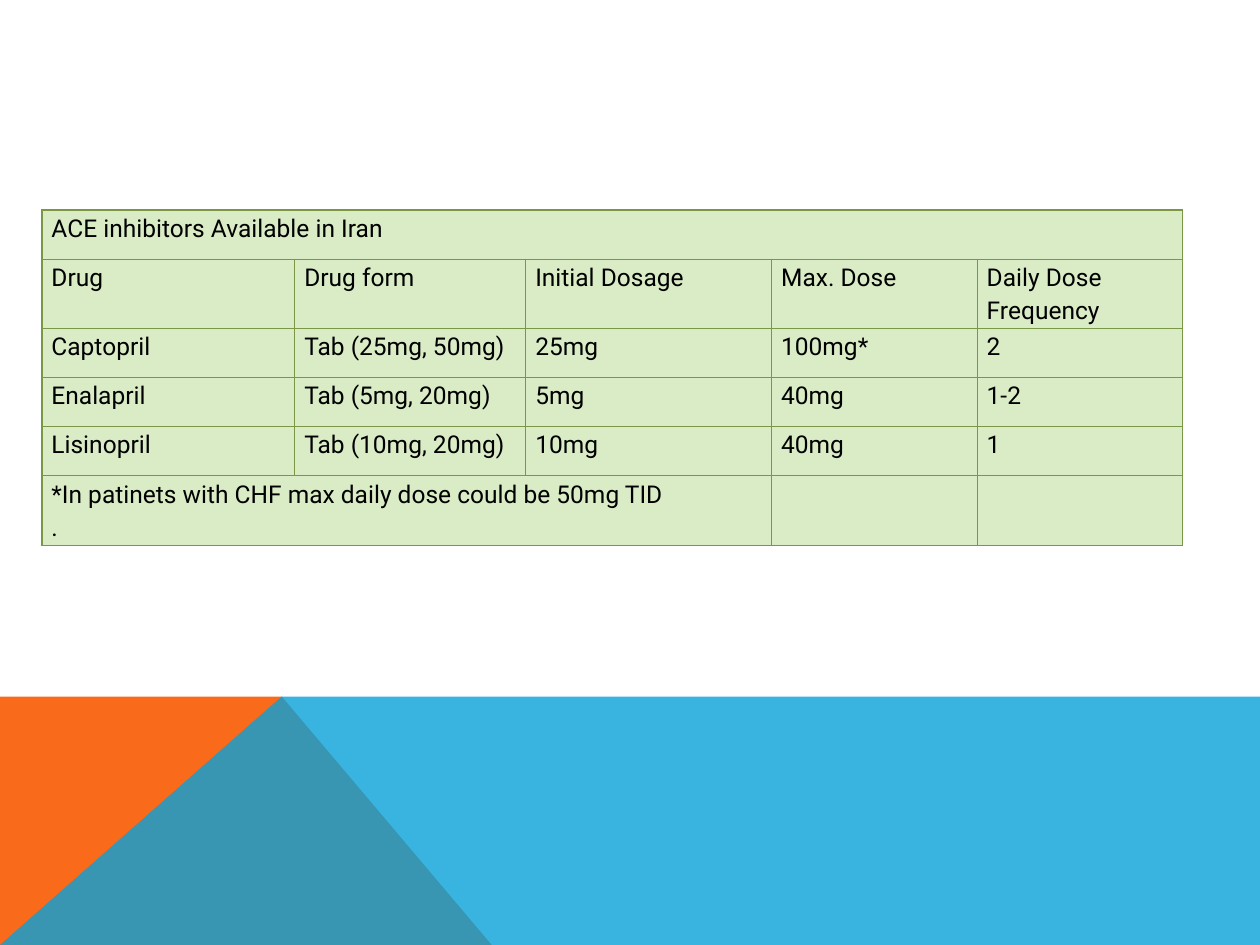
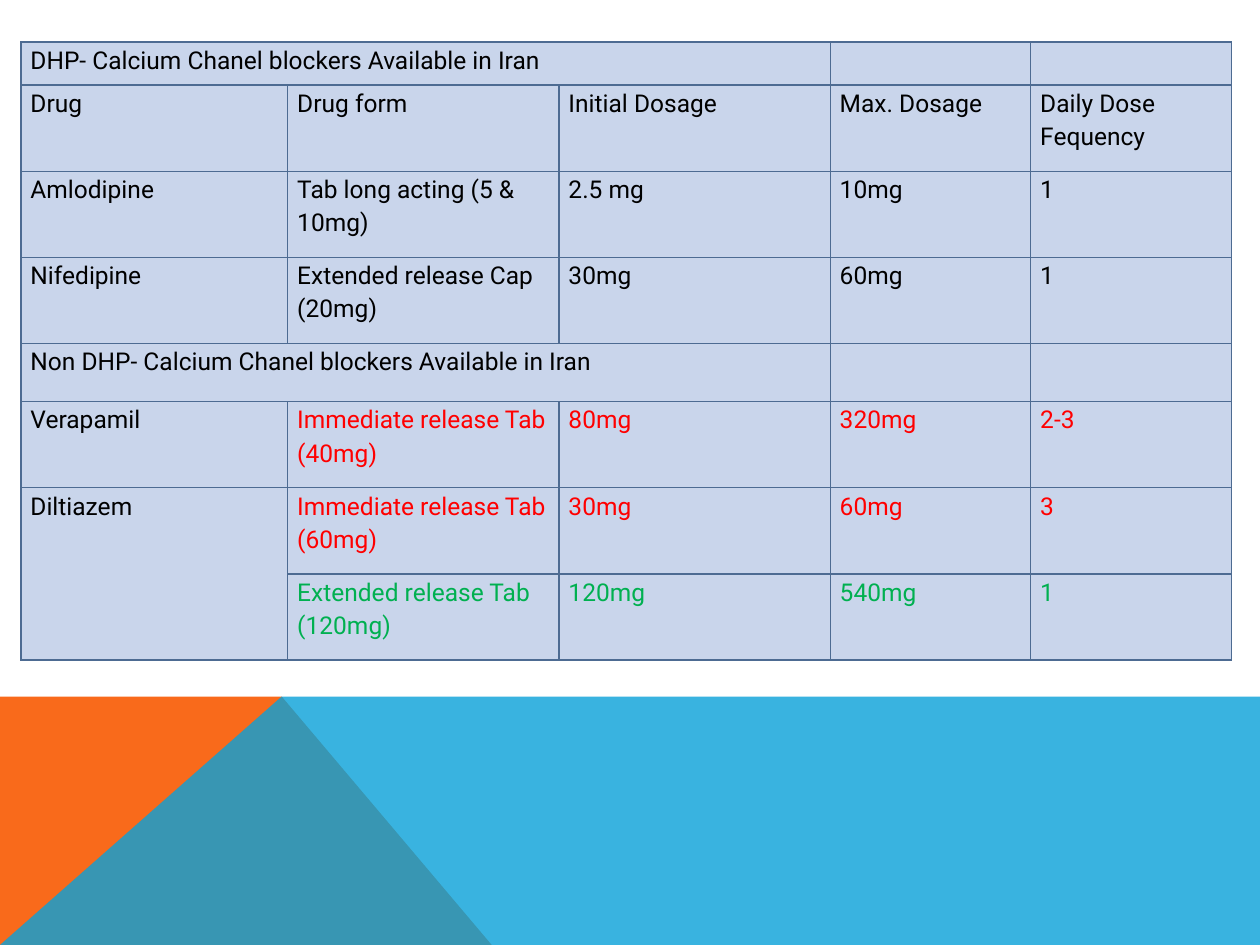
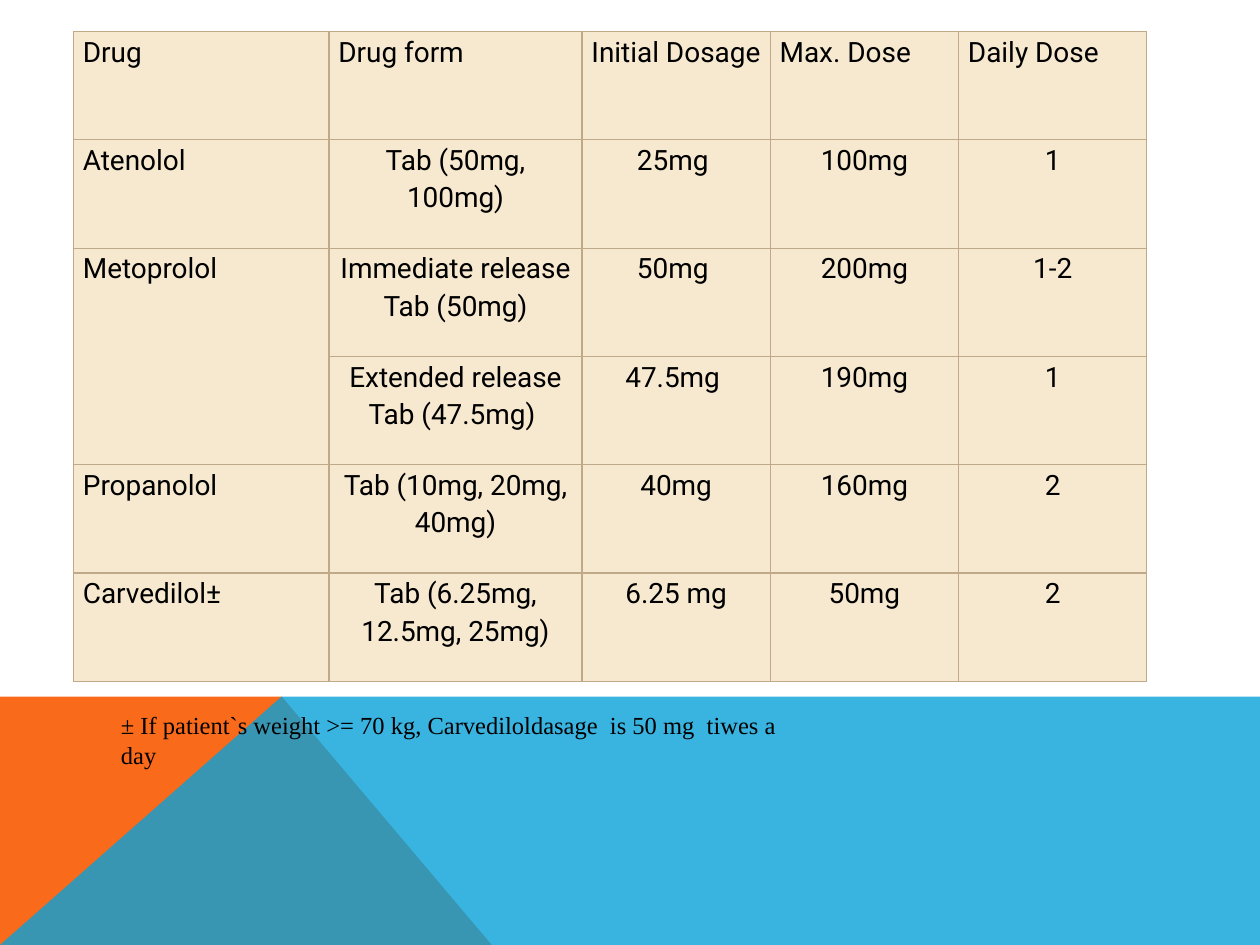
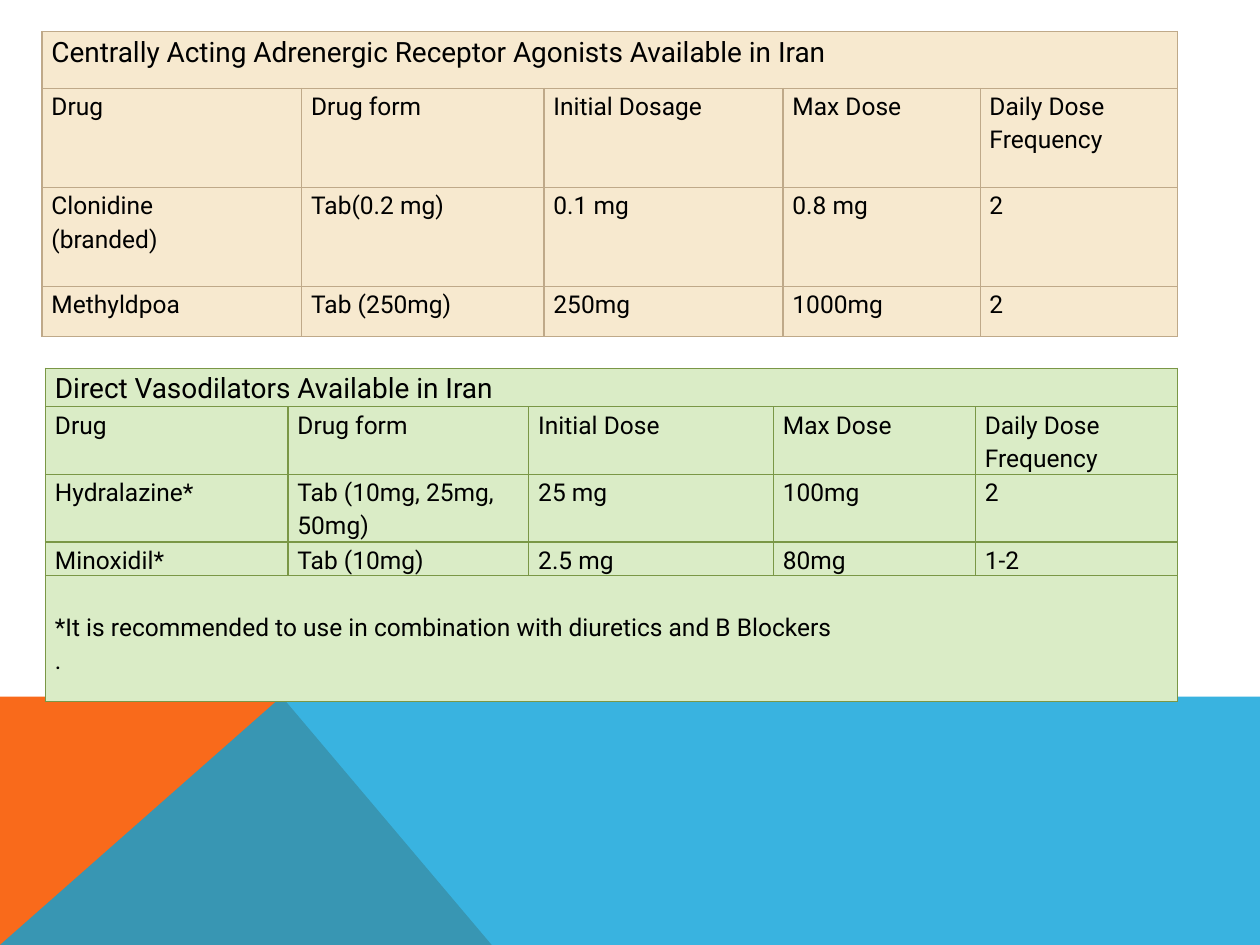
from dataclasses import dataclass, field

from pptx import Presentation
from pptx.dml.color import RGBColor
from pptx.enum import text
from pptx.oxml import parse_xml
from pptx.oxml.ns import nsdecls
from pptx.slide import Slide
from pptx.table import _Cell as Cell
from pptx.util import Pt

WIDTH, HEIGHT = 720, 540
BAND_TOP, PEAK_X, FOOT_X = 397.6, 160.8, 281.4

BLACK = RGBColor(0x00, 0x00, 0x00)
RED = RGBColor(0xFF, 0x00, 0x00)
GREEN = RGBColor(0x00, 0xB0, 0x50)
ORANGE = RGBColor(0xF9, 0x6A, 0x1B)
BLUE = RGBColor(0x08, 0xA1, 0xD9)

BODY_FONT = "Roboto"
NOTE_FONT = "Times New Roman"


@dataclass(frozen=True)
class Theme:
    fill: RGBColor
    border: RGBColor


LEAF = Theme(RGBColor(0xDA, 0xEC, 0xC6), RGBColor(0x7A, 0x97, 0x46))
SKY = Theme(RGBColor(0xC9, 0xD5, 0xEB), RGBColor(0x4D, 0x6B, 0x92))
SAND = Theme(RGBColor(0xF7, 0xE9, 0xCF), RGBColor(0xBF, 0xA9, 0x89))


@dataclass(frozen=True)
class DrugTable:
    """A drug table; merges are (row, column, row span, column span)."""
    left: float
    top: float
    cols: tuple[float, ...]
    heights: tuple[float, ...]
    theme: Theme
    rows: tuple[tuple[str, ...], ...]
    merges: tuple[tuple[int, int, int, int], ...] = ()
    size: float = 14
    title_size: float = 14
    centred: bool = False
    row_colors: dict[int, RGBColor] = field(default_factory=dict)
    footnote_gap: float = 0


ACE_INHIBITORS = DrugTable(
    24, 120, (144.5, 132, 140.5, 117.5, 117.5),
    (28.1, 39.6, 28.1, 28.1, 28.1, 39.6), LEAF,
    (
        ("ACE inhibitors Available in Iran",),
        ("Drug", "Drug form", "Initial Dosage", "Max. Dose", "Daily Dose Frequency"),
        ("Captopril", "Tab (25mg, 50mg)", "25mg", "100mg*", "2"),
        ("Enalapril", "Tab (5mg, 20mg)", "5mg", "40mg", "1-2"),
        ("Lisinopril", "Tab (10mg, 20mg)", "10mg", "40mg", "1"),
        ("*In patinets with CHF max daily dose could be 50mg TID\n.",),
    ),
    merges=((0, 0, 1, 5), (5, 0, 1, 3)),
)

CALCIUM_BLOCKERS = DrugTable(
    12, 24, (152.5, 155, 155, 114.6, 114.6),
    (24.6, 49.2, 49.2, 49.2, 33.5, 49.2, 49.2, 49.2), SKY,
    (
        ("DHP- Calcium Chanel blockers Available in Iran",),
        ("Drug", "Drug form", "Initial Dosage", "Max. Dosage", "Daily Dose Fequency"),
        ("Amlodipine", "Tab long acting (5 & 10mg)", "2.5 mg", "10mg", "1"),
        ("Nifedipine", "Extended release Cap (20mg)", "30mg", "60mg", "1"),
        ("Non DHP- Calcium Chanel blockers Available in Iran",),
        ("Verapamil", "Immediate release Tab (40mg)", "80mg", "320mg", "2-3"),
        ("Diltiazem", "Immediate release Tab (60mg)", "30mg", "60mg", "3"),
        ("", "Extended release Tab (120mg)", "120mg", "540mg", "1"),
    ),
    merges=((0, 0, 1, 3), (4, 0, 1, 3), (6, 0, 2, 1)),
    row_colors={5: RED, 6: RED, 7: GREEN},
)

BETA_BLOCKERS = DrugTable(
    42, 18, (146, 144.6, 107.6, 107.6, 107.6), (61.9,) * 6, SAND,
    (
        ("Drug", "Drug form", "Initial Dosage", "Max. Dose", "Daily Dose"),
        ("Atenolol", "Tab (50mg, 100mg)", "25mg ", "100mg", "1"),
        ("Metoprolol", "Immediate release Tab (50mg)", "50mg ", "200mg", "1-2"),
        ("", "Extended release Tab (47.5mg) ", "47.5mg ", "190mg", "1"),
        ("Propanolol", "Tab (10mg, 20mg, 40mg)", "40mg", "160mg", "2"),
        ("Carvedilol±", "Tab (6.25mg, 12.5mg, 25mg)", "6.25 mg", "50mg", "2"),
    ),
    merges=((2, 0, 2, 1),), size=16, title_size=16, centred=True,
)

CENTRAL_AGONISTS = DrugTable(
    24, 18, (148.4, 138.5, 136.6, 112.6, 112.6), (32.5, 56.7, 56.7, 28.3), SAND,
    (
        ("Centrally Acting Adrenergic Receptor Agonists Available in Iran",),
        ("Drug", "Drug form", "Initial Dosage", "Max Dose", "Daily Dose Frequency"),
        ("Clonidine\n(branded)", "Tab(0.2 mg)", "0.1 mg", "0.8 mg", "2"),
        ("Methyldpoa", "Tab (250mg)", "250mg", "1000mg", "2"),
    ),
    merges=((0, 0, 1, 5),), title_size=16,
)

VASODILATORS = DrugTable(
    26, 210.4, (138.6, 137.6, 139.8, 115.4, 115.4), (18, 36, 36, 18, 72), LEAF,
    (
        ("Direct Vasodilators Available in Iran",),
        ("Drug", "Drug form", "Initial Dose", "Max Dose", "Daily Dose Frequency"),
        ("Hydralazine*", "Tab (10mg, 25mg, 50mg)", "25 mg", "100mg", "2"),
        ("Minoxidil*", "Tab (10mg)", "2.5 mg", "80mg", "1-2"),
        ("*It is recommended to use in combination with diuretics and B Blockers\n.",),
    ),
    merges=((0, 0, 1, 5), (4, 0, 1, 5)), title_size=16, footnote_gap=19,
)


def add_polygon(s: Slide, points: list[tuple[float, float]], color: RGBColor,
                alpha: int = 100) -> None:
    """Draw a closed outline without a line; alpha is opacity in percent."""
    builder = s.shapes.build_freeform(*points[0], scale=Pt(1))
    builder.add_line_segments(points[1:], close=True)
    sp = builder.convert_to_shape()
    sp.shadow.inherit = False
    sp.line.fill.background()
    sp.fill.solid()
    sp.fill.fore_color.rgb = color
    if alpha < 100:
        clr = sp.fill._xPr.solidFill[0]
        clr.append(parse_xml(f'<a:alpha {nsdecls("a")} val="{alpha * 1000}"/>'))


def add_bands(s: Slide) -> None:
    add_polygon(s, [(0, HEIGHT), (0, BAND_TOP), (PEAK_X, BAND_TOP), (FOOT_X, HEIGHT)],
                ORANGE)
    add_polygon(s, [(0, HEIGHT), (PEAK_X, BAND_TOP), (WIDTH, BAND_TOP), (WIDTH, HEIGHT)],
                BLUE, alpha=80)


def style_cell(cell: Cell, theme: Theme) -> None:
    tc_pr = cell._tc.get_or_add_tcPr()
    for side in "LRTB":
        tc_pr.append(parse_xml(
            f'<a:ln{side} {nsdecls("a")} w="{Pt(0.75)}"><a:solidFill>'
            f'<a:srgbClr val="{theme.border}"/></a:solidFill></a:ln{side}>'))
    cell.fill.solid()
    cell.fill.fore_color.rgb = theme.fill
    cell.margin_left = cell.margin_right = Pt(5.4)
    cell.margin_top = cell.margin_bottom = Pt(0)


def write_cell(cell: Cell, content: str, size: float, color: RGBColor,
               centred: bool) -> None:
    tf = cell.text_frame
    tf.text = content
    for p in tf.paragraphs:
        p.line_spacing = 1.15
        if centred:
            p.alignment = text.PP_ALIGN.CENTER
        for r in p.runs:
            r.font.name = BODY_FONT
            r.font.size = Pt(size)
            r.font.color.rgb = color


def add_drug_table(s: Slide, drugs: DrugTable) -> None:
    table = s.shapes.add_table(
        len(drugs.heights), len(drugs.cols), Pt(drugs.left), Pt(drugs.top),
        Pt(sum(drugs.cols)), Pt(sum(drugs.heights))).table
    table.first_row = table.horz_banding = False
    for col, width in zip(table.columns, drugs.cols):
        col.width = Pt(width)
    for row, height in zip(table.rows, drugs.heights):
        row.height = Pt(height)
    for cell in table.iter_cells():
        style_cell(cell, drugs.theme)
    for i, contents in enumerate(drugs.rows):
        size = drugs.size if i else drugs.title_size
        for j, content in enumerate(contents):
            if content:
                color = drugs.row_colors.get(i, BLACK) if j else BLACK
                write_cell(table.cell(i, j), content, size, color,
                           drugs.centred and i > 0 and j > 0)
    if drugs.footnote_gap:
        table.cell(len(drugs.rows) - 1, 0).margin_top = Pt(drugs.footnote_gap)
    for i, j, row_span, col_span in drugs.merges:
        table.cell(i, j).merge(table.cell(i + row_span - 1, j + col_span - 1))


def add_note(s: Slide, content: str) -> None:
    tf = s.shapes.add_textbox(Pt(62), Pt(410.4), Pt(412.4), Pt(24.5)).text_frame
    tf.word_wrap = True
    tf.auto_size = text.MSO_AUTO_SIZE.SHAPE_TO_FIT_TEXT
    tf.vertical_anchor = text.MSO_ANCHOR.MIDDLE
    tf.text = content
    font = tf.paragraphs[0].runs[0].font
    font.name = NOTE_FONT
    font.size = Pt(14)
    font.color.rgb = BLACK


def add_drug_slide(prs: Presentation, *tables: DrugTable) -> Slide:
    s = prs.slides.add_slide(prs.slide_layouts[6])
    add_bands(s)
    for drugs in tables:
        add_drug_table(s, drugs)
    return s


def main() -> None:
    prs = Presentation()
    prs.slide_width, prs.slide_height = Pt(WIDTH), Pt(HEIGHT)
    add_drug_slide(prs, ACE_INHIBITORS)
    add_drug_slide(prs, CALCIUM_BLOCKERS)
    s = add_drug_slide(prs, BETA_BLOCKERS)
    add_note(s, "± If patient`s weight >= 70 kg, Carvediloldasage  is 50 mg  tiwes a day")
    add_drug_slide(prs, CENTRAL_AGONISTS, VASODILATORS)
    prs.save("out.pptx")


if __name__ == "__main__":
    main()
